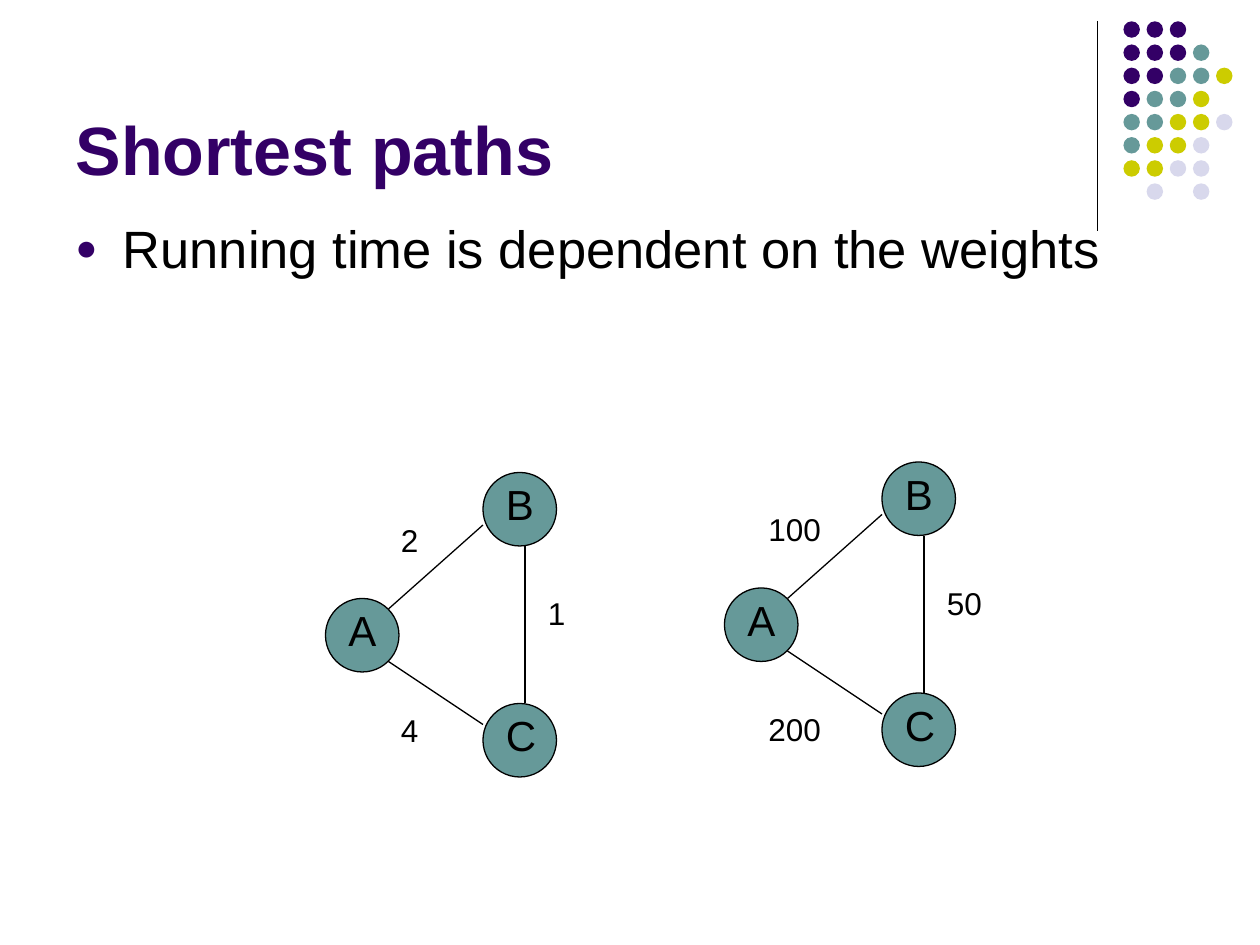
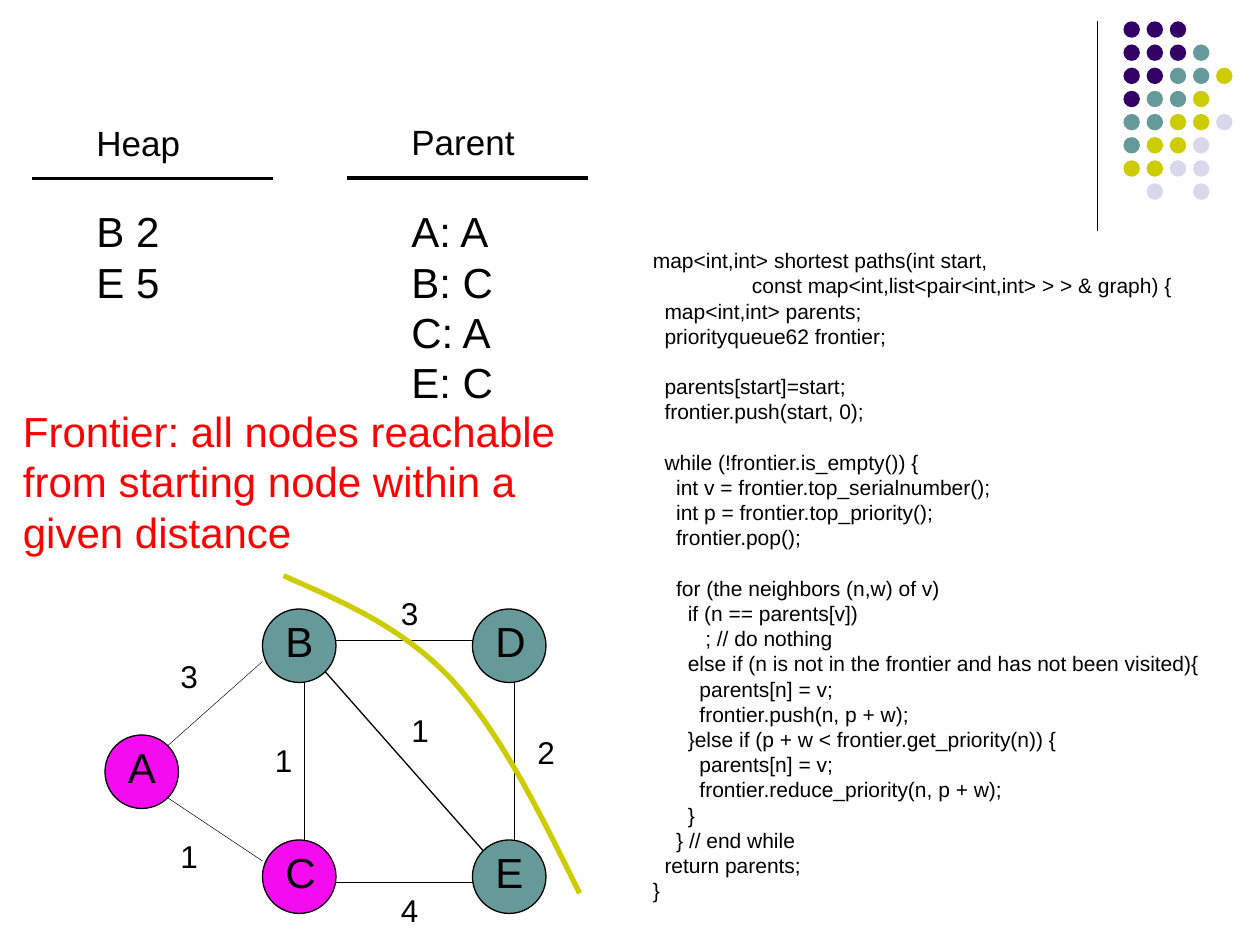
from dataclasses import dataclass

from lxml import etree
from pptx import Presentation
from pptx.dml.color import RGBColor
from pptx.enum.shapes import MSO_CONNECTOR, MSO_SHAPE
from pptx.enum.text import MSO_ANCHOR, PP_ALIGN
from pptx.oxml.ns import qn
from pptx.util import Pt

STRAIGHT = MSO_CONNECTOR.STRAIGHT
OVAL = MSO_SHAPE.OVAL
TOP, BOTTOM = MSO_ANCHOR.TOP, MSO_ANCHOR.BOTTOM
LEFT = PP_ALIGN.LEFT
TITLE_ONLY, BLANK = 5, 6


@dataclass(frozen=True)
class Theme:
    font: str = "Arial"
    ink: str = "000000"
    purple: str = "330066"
    teal: str = "669999"
    olive: str = "CCCC00"
    lilac: str = "D8D8EC"
    magenta: str = "F50BEF"
    red: str = "FF0000"
    title: float = 39
    body: float = 30
    large: float = 24
    heading: float = 20
    weight: float = 18
    code: float = 12
    leading: float = 1.2
    hairline: float = 0.25
    thin: float = 0.75
    rule: float = 2.25
    frontier: float = 3


THEME = Theme()


@dataclass(frozen=True)
class Line:
    text: str
    indent: float = 0
    before: float = 0


@dataclass(frozen=True)
class Edge:
    """An edge between two nodes; its weight is placed relative to node A."""
    ends: str
    weight: str
    label_x: float
    label_y: float
    width: float = THEME.thin


@dataclass(frozen=True)
class Graph:
    """A weighted graph, placed by the top left corner of node A."""
    x: float
    y: float
    nodes: str
    edges: tuple[Edge, ...]
    visited: str = ""


@dataclass(frozen=True)
class Column:
    heading: str
    rows: str
    x: float
    rule_y: float


# Graph layout, measured from the top left corner of node A
NODE_SIZE = 42
NODE_OFFSETS = {"A": (0, 0), "B": (90, -72), "C": (90, 60), "D": (210, -72), "E": (210, 60)}
EDGE_ROUTES = {
    "AB": (36, 6, 90, -42),
    "AC": (36, 36, 90, 72),
    "BC": (114, 60, 114, -30),
    "BD": (132, -54, 210, -54),
    "BE": (126, -36, 216, 66),
    "CE": (132, 84, 210, 84),
    "DE": (234, 60, 234, -30),
}

SMALL_WEIGHTS = Graph(186, 342, "ABC", (
    Edge("AB", "2", 36, -48), Edge("AC", "4", 36, 61), Edge("BC", "1", 120, -6)))
LARGE_WEIGHTS = Graph(414, 336, "ABC", (
    Edge("AB", "100", 18, -48), Edge("AC", "200", 18, 66), Edge("BC", "50", 120, -6)))
SEARCH_STATE = Graph(60, 420, "ABCED", (
    Edge("AB", "3", 36, -48, THEME.hairline),
    Edge("AC", "1", 36, 55, THEME.hairline),
    Edge("CE", "4", 162, 85.5, THEME.hairline),
    Edge("DE", "2", 240, -4.5),
    Edge("BC", "1", 90, 0, THEME.hairline),
    Edge("BD", "3", 162, -84),
    Edge("BE", "1", 168, -17)), visited="AC")

COLUMNS = (
    Column("Heap", "B 2\nE 5", 18, 102),
    Column("Parent", "A: A\nB: C\nC: A\nE: C", 198, 101.5),
)

# Frontier: a start point, then three points for each curve
FRONTIER_POINTS = ((331.2, 510.5), (308.9, 465.1), (286.6, 419.8), (258.5, 388.8),
                   (230.4, 358.6), (196.6, 344.2), (162, 329))

# Code in blocks that a gap divides; each line has its depth in characters
CODE_BLOCKS = (
    ((0, "map<int,int> shortest paths(int start,"),
     (17, "const map<int,list<pair<int,int> > > & graph) {"),
     (2, "map<int,int> parents;"),
     (2, "priorityqueue62 frontier;")),
    ((2, "parents[start]=start;"),
     (2, "frontier.push(start, 0);")),
    ((2, "while (!frontier.is_empty()) {"),
     (4, "int v = frontier.top_serialnumber();"),
     (4, "int p = frontier.top_priority();"),
     (4, "frontier.pop();")),
    ((4, "for (the neighbors (n,w) of v)"),
     (6, "if (n == parents[v])"),
     (9, "; // do nothing"),
     (6, "else if (n is not in the frontier and has not been visited){"),
     (8, "parents[n] = v;"),
     (8, "frontier.push(n, p + w);"),
     (6, "}else if (p + w < frontier.get_priority(n)) {"),
     (8, "parents[n] = v;"),
     (8, "frontier.reduce_priority(n, p + w);"),
     (6, "}"),
     (4, "} // end while"),
     (2, "return parents;"),
     (0, "}")),
)
CHARACTER_WIDTH = 3.33

# Corner dots: one letter for each colour, a point for a gap
DOT_ROWS = ("PPP", "PPPT", "PPTTO", "PTTO", "TTOOL", "TOOL", "OOLL", ".L.L")
DOT_COLORS = {"P": THEME.purple, "T": THEME.teal, "O": THEME.olive, "L": THEME.lilac}
DOT_X, DOT_Y, DOT_SIZE, DOT_PITCH = 642, 12.2, 9.4, 13.23


def rgb(color: str) -> RGBColor:
    return RGBColor.from_string(color)


def write(frame, lines: list[Line], *, size: float, color: str = THEME.ink,
          bold: bool = False, anchor=TOP, leading: float | None = THEME.leading) -> None:
    """Fill a text frame, one paragraph for each line."""
    frame.word_wrap = True
    frame.vertical_anchor = anchor
    for index, line in enumerate(lines):
        paragraph = frame.add_paragraph() if index else frame.paragraphs[0]
        paragraph.text = line.text
        paragraph.alignment = LEFT
        paragraph.space_before = Pt(line.before)
        if leading:
            paragraph.line_spacing = Pt(size * leading)
        if line.indent:
            paragraph._p.get_or_add_pPr().set("marL", str(Pt(line.indent)))
        for run in paragraph.runs:
            run.font.name = THEME.font
            run.font.size = Pt(size)
            run.font.bold = bold
            run.font.color.rgb = rgb(color)


def add_text(slide, text: str | list[Line], x: float, y: float, width: float,
             height: float, **text_format):
    box = slide.shapes.add_textbox(Pt(x), Pt(y), Pt(width), Pt(height))
    lines = [Line(text)] if isinstance(text, str) else text
    write(box.text_frame, lines, **text_format)
    return box


def add_line(slide, x1: float, y1: float, x2: float, y2: float, width: float) -> None:
    line = slide.shapes.add_connector(STRAIGHT, Pt(x1), Pt(y1), Pt(x2), Pt(y2))
    line.line.color.rgb = rgb(THEME.ink)
    line.line.width = Pt(width)
    etree.SubElement(line._element.spPr, qn("a:effectLst"))


def add_disc(slide, x: float, y: float, size: float, color: str, outlined: bool) -> None:
    disc = slide.shapes.add_shape(OVAL, Pt(x), Pt(y), Pt(size), Pt(size))
    disc.shadow.inherit = False
    disc.fill.solid()
    disc.fill.fore_color.rgb = rgb(color)
    if outlined:
        disc.line.color.rgb = rgb(THEME.ink)
        disc.line.width = Pt(THEME.thin)
    else:
        disc.line.fill.background()


def add_slide(deck, layout: int):
    """Add a slide with the corner rule and dots."""
    slide = deck.slides.add_slide(deck.slide_layouts[layout])
    add_line(slide, 627, 12, 627, 132, THEME.thin)
    for row, dots in enumerate(DOT_ROWS):
        for column, dot in enumerate(dots):
            if dot in DOT_COLORS:
                add_disc(slide, DOT_X + column * DOT_PITCH, DOT_Y + row * DOT_PITCH,
                         DOT_SIZE, DOT_COLORS[dot], outlined=False)
    return slide


def add_title(slide, text: str) -> None:
    title = slide.shapes.title
    title.left, title.top, title.width, title.height = Pt(36), Pt(9.5), Pt(594), Pt(102)
    write(title.text_frame, [Line(text)], size=THEME.title, color=THEME.purple,
          bold=True, anchor=BOTTOM, leading=None)


def add_bullet(slide, text: str) -> None:
    box = add_text(slide, [Line(text, indent=27)], 36, 120, 648, 96, size=THEME.body)
    properties = box.text_frame.paragraphs[0]._p.get_or_add_pPr()
    properties.set("indent", str(-Pt(27)))
    color = etree.SubElement(properties, qn("a:buClr"))
    etree.SubElement(color, qn("a:srgbClr"), val=THEME.purple)
    etree.SubElement(properties, qn("a:buSzPct"), val="70000")
    etree.SubElement(properties, qn("a:buFont"), typeface=THEME.font)
    etree.SubElement(properties, qn("a:buChar"), char="●")


def add_graph(slide, graph: Graph) -> None:
    for node in graph.nodes:
        dx, dy = NODE_OFFSETS[node]
        x, y = graph.x + dx, graph.y + dy
        color = THEME.magenta if node in graph.visited else THEME.teal
        add_disc(slide, x, y, NODE_SIZE, color, outlined=True)
        add_text(slide, node, x + 6, y, 36, 36, size=THEME.large)
    for edge in graph.edges:
        x1, y1, x2, y2 = EDGE_ROUTES[edge.ends]
        add_line(slide, graph.x + x1, graph.y + y1, graph.x + x2, graph.y + y2, edge.width)
    for edge in graph.edges:
        add_text(slide, edge.weight, graph.x + edge.label_x, graph.y + edge.label_y,
                 54, 28.8, size=THEME.weight)


def add_column(slide, column: Column) -> None:
    add_text(slide, column.heading, column.x + 30, column.rule_y - 36, 78, 31,
             size=THEME.heading)
    add_line(slide, column.x, column.rule_y, column.x + 138, column.rule_y, THEME.rule)
    add_text(slide, column.rows, column.x + 30, 114, 84,
             7.2 + 29 * len(column.rows.splitlines()), size=THEME.large)


def add_code(slide) -> None:
    gap = THEME.code * THEME.leading
    lines = [Line(text, depth * CHARACTER_WIDTH, gap if block and not row else 0)
             for block, rows in enumerate(CODE_BLOCKS)
             for row, (depth, text) in enumerate(rows)]
    add_text(slide, lines, 366, 138, 330, 385, size=THEME.code)


def add_frontier(slide) -> None:
    start, *others = [(Pt(x), Pt(y)) for x, y in FRONTIER_POINTS]
    builder = slide.shapes.build_freeform(*start)
    builder.add_line_segments(others, close=False)
    curve = builder.convert_to_shape()
    curve.shadow.inherit = False
    curve.fill.background()
    curve.line.color.rgb = rgb(THEME.olive)
    curve.line.width = Pt(THEME.frontier)
    # Turn each three straight segments into one Bézier segment
    segments = list(curve._element.iter(qn("a:lnTo")))
    outline = segments[0].getparent()
    for first in range(0, len(segments), 3):
        bezier = etree.SubElement(outline, qn("a:cubicBezTo"))
        for segment in segments[first:first + 3]:
            bezier.append(segment[0])
            outline.remove(segment)


def main() -> None:
    deck = Presentation()
    deck.slide_width, deck.slide_height = Pt(720), Pt(540)

    # Effect of the weights
    weights = add_slide(deck, TITLE_ONLY)
    add_title(weights, "Shortest paths")
    add_bullet(weights, "Running time is dependent on the weights")
    add_graph(weights, SMALL_WEIGHTS)
    add_graph(weights, LARGE_WEIGHTS)

    # One step of the search beside its code
    search = add_slide(deck, BLANK)
    add_graph(search, SEARCH_STATE)
    add_code(search)
    for column in COLUMNS:
        add_column(search, column)
    add_frontier(search)
    add_text(search, "Frontier: all nodes reachable from starting node within a given distance",
             6, 228, 342, 94.3, size=THEME.large, color=THEME.red)

    deck.save("out.pptx")


if __name__ == "__main__":
    main()
